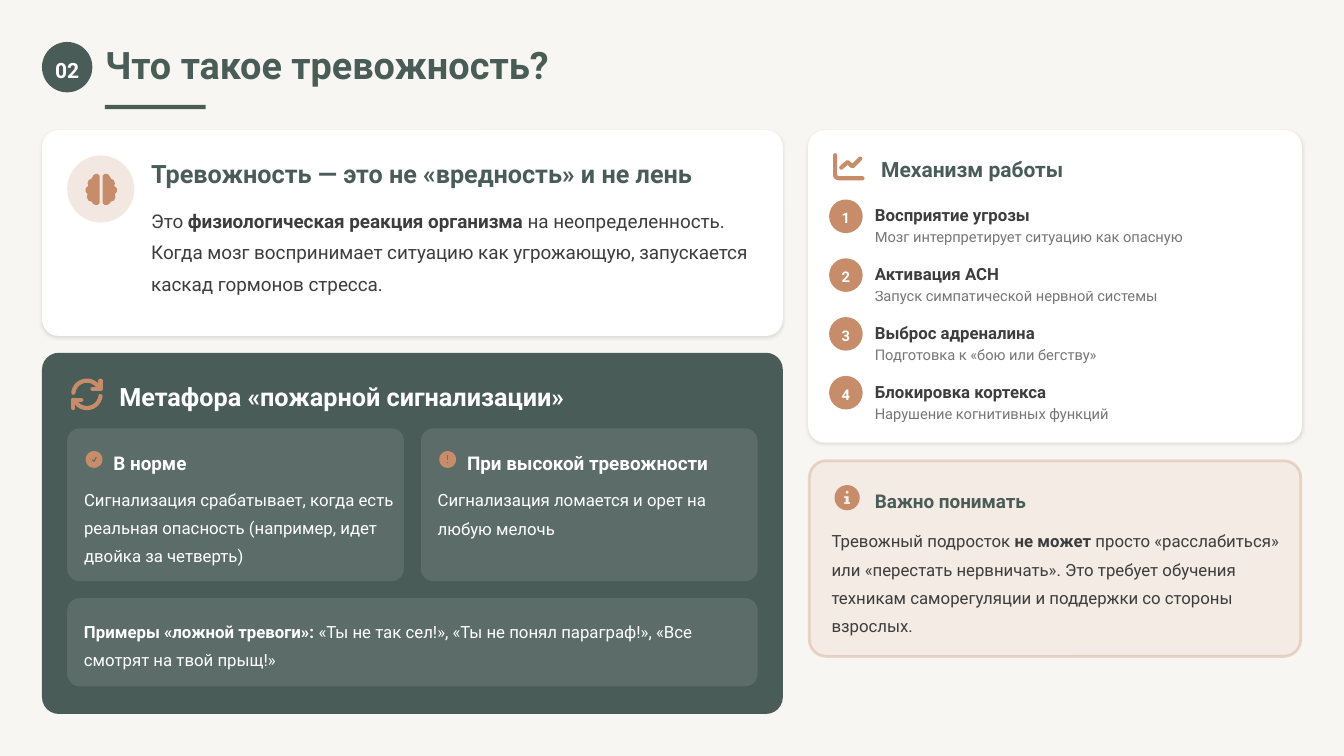
import math
import pptx
import pptx.dml.color
import pptx.enum.shapes
import pptx.enum.text
import pptx.oxml
import pptx.util

COLS, ROWS = 160, 90
GREEN, CLAY, WHITE, INK = "4A5C58", "C78D6A", "FFFFFF", "3D3D3D"
KIND = pptx.enum.shapes.MSO_SHAPE
ALIGN = pptx.enum.text.PP_ALIGN
SPACE = 'xmlns:a="http://schemas.openxmlformats.org/drawingml/2006/main"'
SHADE = (f'<a:effectLst {SPACE}><a:outerShdw blurRad="27940" dist="10160" dir="5400000">'
         '<a:srgbClr val="000000"><a:alpha val="10000"/></a:srgbClr></a:outerShdw></a:effectLst>')
FILL = "p:spPr/a:solidFill/a:srgbClr"
LINE = "p:spPr/a:ln//a:srgbClr"
FONT = ".//a:rPr//a:srgbClr"


def hue(code):
    return pptx.dml.color.RGBColor.from_string(code)


def cell(num):
    return pptx.util.Inches(num / 12)


def inset(box, left, top, wide, high):
    return box[0] + left, box[1] + top, wide, high


def fade(shape, route, rate):
    for node in shape.element.xpath(route):
        node.append(pptx.oxml.parse_xml(f'<a:alpha {SPACE} val="{rate * 1000}"/>'))


def block(slide, box, kind, fill, rate=100, curve=0):
    shape = slide.shapes.add_shape(kind, *map(cell, box))
    shape.shadow.inherit = False
    shape.fill.solid()
    shape.fill.fore_color.rgb = hue(fill)
    shape.line.fill.background()
    if curve:
        shape.adjustments[0] = curve / min(box[2:])
    if rate < 100:
        fade(shape, FILL, rate)
    return shape


def card(slide, box, fill, shade=False):
    shape = block(slide, box, KIND.ROUNDED_RECTANGLE, fill, curve=2)
    if shade:
        prop = shape.element.spPr
        prop.remove(prop.xpath("a:effectLst")[0])
        prop.append(pptx.oxml.parse_xml(SHADE))
    return shape


def pane(slide, box):
    block(slide, box, KIND.ROUNDED_RECTANGLE, WHITE, 10, 1.5)


def write(shape, text, size, color, space, bold=False, align=ALIGN.LEFT, wrap=True):
    frame = shape.text_frame
    form = {"margin_left": 0, "margin_right": 0, "margin_top": 0, "margin_bottom": 0,
            "word_wrap": wrap, "auto_size": pptx.enum.text.MSO_AUTO_SIZE.NONE,
            "vertical_anchor": pptx.enum.text.MSO_ANCHOR.MIDDLE}
    for key, val in form.items():
        setattr(frame, key, val)
    para = frame.paragraphs[0]
    for key, val in {"alignment": align, "line_spacing": space}.items():
        setattr(para, key, val)
    for turn, part in enumerate(text.split("*")):
        if part:
            run = para.add_run()
            run.text = part
            form = {"name": "Roboto", "size": pptx.util.Pt(size), "bold": bold or turn % 2 == 1}
            for key, val in form.items():
                setattr(run.font, key, val)
            run.font.color.rgb = hue(color)


def label(slide, box, *args, **form):
    shape = slide.shapes.add_textbox(*map(cell, box))
    write(shape, *args, **form)
    return shape


def badge(slide, box, text, size, fill):
    write(block(slide, box, KIND.OVAL, fill), text, size, WHITE, 1.2, True, ALIGN.CENTER, False)


def ring(mid, top, rad):
    turns = [math.tau * step / 32 for step in range(32)]
    return [(mid + rad * math.cos(turn), top + rad * math.sin(turn)) for turn in turns]


def trace(slide, box, paths, close):
    left, top, side = box
    spots = [[(cell(left + side * x / 100), cell(top + side * y / 100)) for x, y in route]
             for route in paths]
    pen = slide.shapes.build_freeform(*spots[0][0])
    pen.add_line_segments(spots[0][1:], close=close)
    for route in spots[1:]:
        pen.move_to(*route[0])
        pen.add_line_segments(route[1:], close=close)
    shape = pen.convert_to_shape()
    shape.shadow.inherit = False
    return shape


def solid(slide, box, paths):
    shape = trace(slide, box, paths, True)
    shape.fill.solid()
    shape.fill.fore_color.rgb = hue(CLAY)
    shape.line.fill.background()


def stroke(slide, box, paths):
    shape = trace(slide, box, paths, False)
    shape.fill.background()
    shape.line.color.rgb = hue(CLAY)
    shape.line.width = pptx.util.Pt(3)
    edge = shape.element.xpath("p:spPr/a:ln")[0]
    edge.set("cap", "rnd")
    edge.append(pptx.oxml.parse_xml(f"<a:round {SPACE}/>"))


def flip(route, both=False):
    return [(100 - x, 100 - y if both else y) for x, y in route]


DISC = ring(50, 50, 50)
HALF = [(22, 10), (26, 3), (32, 0), (39, 0), (45, 6), (45, 94), (39, 100), (32, 100), (24, 97),
        (20, 90), (9, 86), (4, 76), (6, 65), (0, 58), (0, 46), (8, 39), (6, 30), (10, 20), (18, 16)]
BRAIN = [HALF, flip(HALF)]
ARC = [(50 + 44 * math.cos(math.radians(deg)), 50 + 44 * math.sin(math.radians(deg)))
       for deg in range(187, 338, 6)] + [(94, 32)]
HOOK = [(94, 6), (94, 32), (68, 32)]
CYCLE = [ARC, HOOK, flip(ARC, True), flip(HOOK, True)]
CHART = [[(6, 13), (6, 78), (9, 84), (16, 87), (94, 87)], [(26, 53), (46, 35), (62, 49), (87, 24)]]
CHECK = [DISC, [(65, 41), (53, 65), (47, 65), (35, 53), (41, 47), (49, 54), (59, 35), (66, 35)]]
ALERT = [DISC, [(47, 24), (53, 24), (53, 54), (47, 54)], ring(50, 68, 4)]
INFO = [DISC, ring(50, 28, 6), [(38, 44), (56, 44), (56, 68), (62, 68), (62, 76), (38, 76),
                                (38, 68), (44, 68), (44, 52), (38, 52)]]


def header(slide, box):
    badge(slide, inset(box, 0, 0, 6, 6), "02", 15, GREEN)
    title = slide.shapes.title
    spot = inset(box, 7.5, 0.5, 80, 5)
    for key, val in zip(("left", "top", "width", "height"), spot):
        setattr(title, key, cell(val))
    write(title, "Что такое тревожность?", 27, GREEN, 0.9, True)
    block(slide, inset(box, 7.5, 7.5, 12, 0.5), KIND.RECTANGLE, GREEN)


def define(slide, box):
    card(slide, box, WHITE, True)
    block(slide, inset(box, 3, 3, 8, 8), KIND.OVAL, CLAY, 20)
    solid(slide, (box[0] + 5.2, box[1] + 5.2, 3.7), BRAIN)
    label(slide, inset(box, 13, 3, 74, 4), "Тревожность — это не «вредность» и не лень",
          18, GREEN, 1.1, True)
    label(slide, inset(box, 13, 8.5, 73.3, 11),
          "Это *физиологическая реакция организма *на неопределенность. Когда мозг воспринимает "
          "ситуацию как угрожающую, запускается каскад гормонов стресса.", 13.5, INK, 1.4)


def state(slide, box, icon, head, text, high):
    pane(slide, box)
    solid(slide, (box[0] + 2.2, box[1] + 2.7, 2), icon)
    label(slide, inset(box, 5.5, 1.9, 33, 3.5), head, 13.5, WHITE, 1.3, True)
    label(slide, inset(box, 2, 6.5, 37.1, high), text, 12, WHITE, 1.4)


def alarm(slide, box):
    card(slide, box, GREEN)
    stroke(slide, (box[0] + 3.5, box[1] + 3.1, 3.7), CYCLE)
    label(slide, inset(box, 9.2, 3, 74, 4), "Метафора «пожарной сигнализации»", 18, WHITE, 1.1, True)
    states = [
        (CHECK, "В норме", "Сигнализация срабатывает, когда есть реальная опасность "
                           "(например, идет двойка за четверть)", 9.7),
        (ALERT, "При высокой тревожности", "Сигнализация ломается и орет на любую мелочь", 6.5)]
    for col, parts in enumerate(states):
        state(slide, inset(box, 3 + 42.1 * col, 9, 40.1, 18.2), *parts)
    base = inset(box, 3, 29.2, 82.2, 10.5)
    pane(slide, base)
    label(slide, inset(base, 2, 2, 79.2, 6.5),
          "*Примеры «ложной тревоги»:* «Ты не так сел!», «Ты не понял параграф!», "
          "«Все смотрят на твой прыщ!»", 12, WHITE, 1.4)


def process(slide, box):
    card(slide, box, WHITE, True)
    stroke(slide, (box[0] + 3, box[1] + 2.5, 3.7), CHART)
    label(slide, inset(box, 8.7, 2.6, 46, 3.5), "Механизм работы", 15, GREEN, 1.2, True)
    steps = [("Восприятие угрозы", "Мозг интерпретирует ситуацию как опасную"),
             ("Активация АСН", "Запуск симпатической нервной системы"),
             ("Выброс адреналина", "Подготовка к «бою или бегству»"),
             ("Блокировка кортекса", "Нарушение когнитивных функций")]
    for row, (head, note) in enumerate(steps):
        spot = inset(box, 2.5, 8.25 + 7 * row, 4, 4)
        badge(slide, spot, str(row + 1), 10.5, CLAY)
        label(slide, inset(spot, 5.45, 0, 46, 3), head, 12, INK, 1.3, True)
        text = label(slide, inset(spot, 5.45, 3, 46, 2.5), note, 10.5, INK, 1.2)
        fade(text, FONT, 70)


def notice(slide, box):
    shape = card(slide, box, CLAY)
    shape.line.color.rgb = hue(CLAY)
    shape.line.width = pptx.util.Pt(2)
    fade(shape, FILL, 10)
    fade(shape, LINE, 30)
    solid(slide, (box[0] + 3, box[1] + 2.9, 3), INFO)
    label(slide, inset(box, 7.8, 2.65, 46, 3.5), "Важно понимать", 13.5, GREEN, 1.3, True)
    label(slide, inset(box, 2.65, 7.65, 54.2, 13),
          "Тревожный подросток *не может* просто «расслабиться» или «перестать нервничать». "
          "Это требует обучения техникам саморегуляции и поддержки со стороны взрослых.",
          12, INK, 1.4)


def main():
    deck = pptx.Presentation()
    deck.slide_width, deck.slide_height = cell(COLS), cell(ROWS)
    slide = deck.slides.add_slide(deck.slide_layouts[5])
    slide.background.fill.solid()
    slide.background.fill.fore_color.rgb = hue("F8F6F2")
    header(slide, (5, 5, 150, 8))
    define(slide, (5, 15.5, 88.2, 24.5))
    alarm(slide, (5, 42, 88.2, 43))
    process(slide, (96.2, 15.5, 58.8, 37.2))
    notice(slide, (96.35, 54.85, 58.5, 23.3))
    deck.save("out.pptx")


if __name__ == "__main__":
    main()
